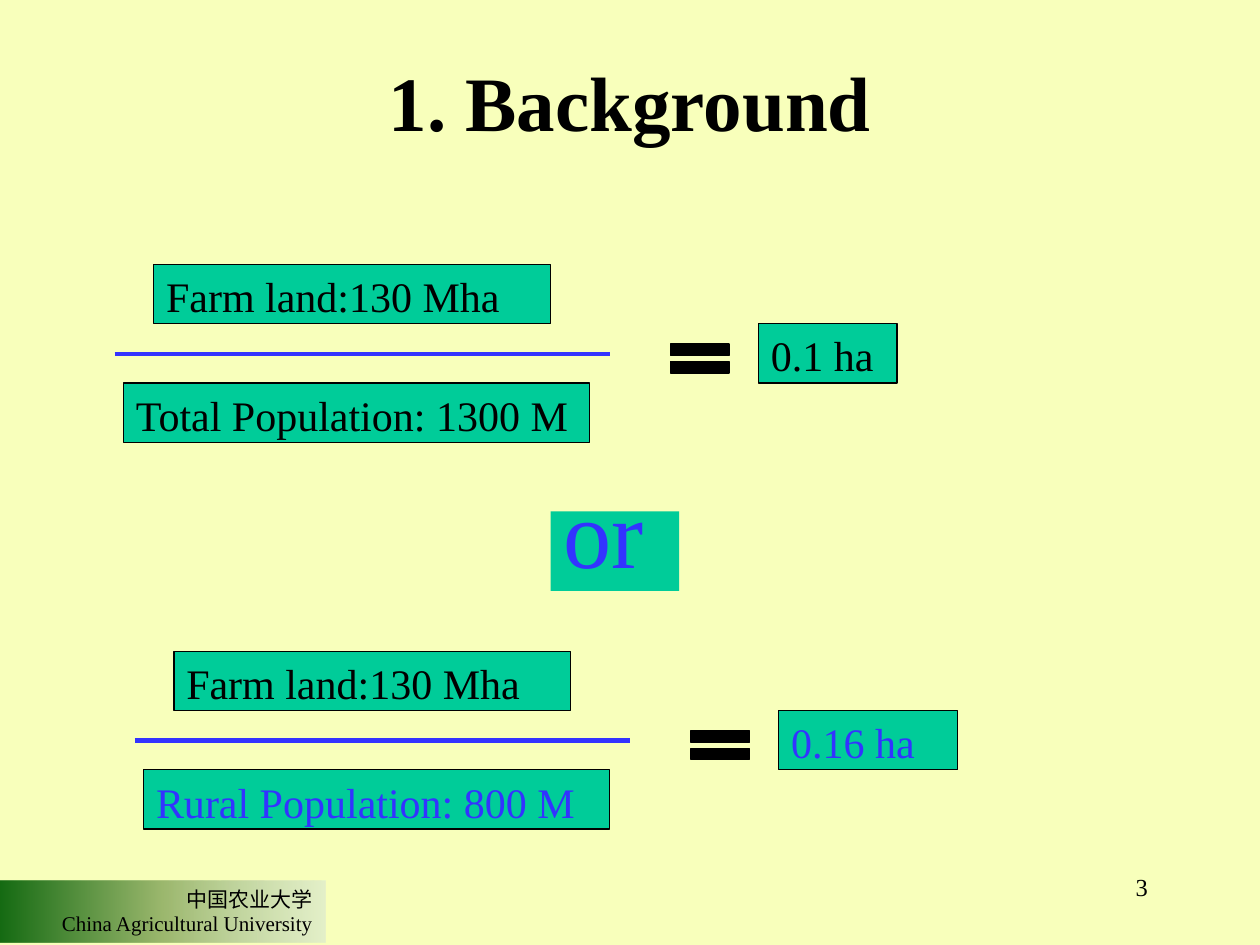
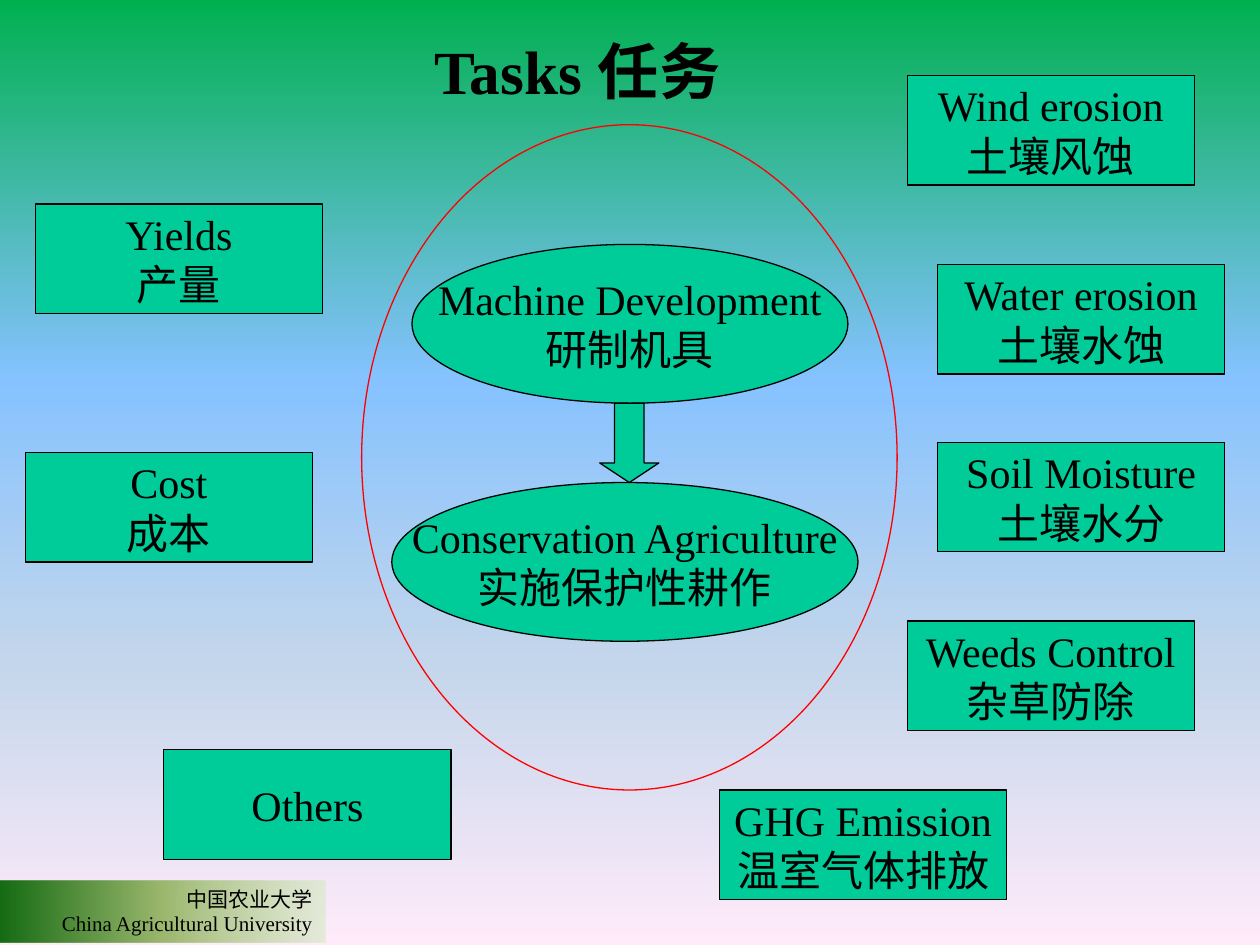
from dataclasses import dataclass

from pptx import Presentation
from pptx.dml.color import RGBColor
from pptx.enum.shapes import MSO_CONNECTOR, MSO_SHAPE as SHAPE
from pptx.enum.text import MSO_ANCHOR as ANCHOR, MSO_AUTO_SIZE, PP_ALIGN as ALIGN
from pptx.oxml.ns import qn
from pptx.util import Inches, Pt
from lxml.etree import SubElement


@dataclass(frozen=True)
class Theme:
    font: str = "Times New Roman"
    black: str = "000000"
    blue: str = "3333FF"
    red: str = "FF0000"
    green: str = "00CC99"
    page: str = "F8FFBB"
    # Gradient stops: position %, colour, opacity %
    sky: tuple = ((0, "00B050", 100), (40, "85C2FF", 100),
                  (70, "C4D6EB", 100), (100, "FFEBFA", 100))
    band: tuple = ((0, "DDEBCF", 72), (50, "9CB86E", 100), (100, "156B13", 100))
    title: int = 44
    subtitle: int = 35
    body: int = 24
    huge: int = 55
    number: int = 14
    footer: int = 12
    outline: float = 0.75
    bar: float = 2.75


T = Theme()


def rgb(color):
    return RGBColor.from_string(color)


def set_gradient(fill, element, stops, angle):
    """Fill with the given stops; the angle runs clockwise in degrees."""
    fill.gradient()
    fill.gradient_angle = (360 - angle) % 360
    gs_list = next(element.iter(qn("a:gsLst")))
    for gs in list(gs_list):
        gs_list.remove(gs)
    for pos, color, opacity in stops:
        gs = SubElement(gs_list, qn("a:gs"), pos=str(pos * 1000))
        clr = SubElement(gs, qn("a:srgbClr"), val=color)
        if opacity < 100:
            SubElement(clr, qn("a:alpha"), val=str(opacity * 1000))


def set_text(sp, text, size=T.body, color=T.black, bold=False, align=ALIGN.LEFT,
             anchor=ANCHOR.TOP, wrap=True, spacing=None):
    tf = sp.text_frame
    tf.text = text
    tf.auto_size = MSO_AUTO_SIZE.NONE
    tf.word_wrap = wrap
    tf.vertical_anchor = anchor
    for p in tf.paragraphs:
        p.alignment = align
        if spacing:
            p.line_spacing = Pt(spacing)
        p.font.name = T.font
        p.font.size = Pt(size)
        p.font.bold = bold
        p.font.color.rgb = rgb(color)


def add_shape(slide, kind, x, y, w, h, fill=T.green, line=T.black):
    sp = slide.shapes.add_shape(kind, Inches(x), Inches(y), Inches(w), Inches(h))
    sp.shadow.inherit = False
    if fill:
        sp.fill.solid()
        sp.fill.fore_color.rgb = rgb(fill)
    else:
        sp.fill.background()
    if line:
        sp.line.color.rgb = rgb(line)
        sp.line.width = Pt(T.outline)
    else:
        sp.line.fill.background()
    return sp


def add_title(slide, text, x, y, w, h, **style):
    sp = slide.shapes.title
    sp.left, sp.top, sp.width, sp.height = map(Inches, (x, y, w, h))
    set_text(sp, text, bold=True, **style)


def add_footer(slide):
    sp = add_shape(slide, SHAPE.RECTANGLE, 0, 6.99, 2.58, 0.49, line=None)
    set_gradient(sp.fill, sp.element, T.band, 180)
    set_text(sp, "中国农业大学\nChina Agricultural University", T.footer,
             align=ALIGN.RIGHT, spacing=14)


def add_number(slide, text):
    sp = slide.shapes.add_textbox(Inches(7.13), Inches(6.87), Inches(2.08), Inches(0.5))
    set_text(sp, text, T.number, align=ALIGN.RIGHT)


def add_label(slide, text, x, y, w, color=T.black):
    set_text(add_shape(slide, SHAPE.RECTANGLE, x, y, w, 0.47), text, color=color)


def add_bar(slide, x, y, w):
    line = slide.shapes.add_connector(MSO_CONNECTOR.STRAIGHT, Inches(x), Inches(y),
                                      Inches(x + w), Inches(y))
    line.line.color.rgb = rgb(T.blue)
    line.line.width = Pt(T.bar)
    SubElement(line.element.spPr, qn("a:effectLst"))


def add_fraction(slide, x, y, top, bottom, result, result_w, color=T.black):
    """Numerator over denominator, an equals sign and the result."""
    add_label(slide, top, x + 0.31, y, 3.15)
    add_bar(slide, x, y + 0.71, 3.93)
    add_label(slide, bottom, x + 0.07, y + 0.94, 3.7, color)
    add_shape(slide, SHAPE.MATH_EQUAL, x + 4.33, y + 0.55, 0.63, 0.39, fill=T.black)
    add_label(slide, result, x + 5.11, y + 0.47, result_w, color)


def add_node(slide, kind, text, x, y, w, h):
    set_text(add_shape(slide, kind, x, y, w, h), text, align=ALIGN.CENTER,
             anchor=ANCHOR.MIDDLE, wrap=False)


def new_slide(prs):
    slide = prs.slides.add_slide(prs.slide_layouts[5])
    add_footer(slide)
    return slide


def build_background(prs):
    slide = new_slide(prs)
    fill = slide.background.fill
    fill.solid()
    fill.fore_color.rgb = rgb(T.page)
    add_title(slide, "1. Background", 0.75, 0.29, 8.5, 1.02, size=T.title,
              align=ALIGN.CENTER, anchor=ANCHOR.MIDDLE)
    add_number(slide, "3")

    # Land per head, for everyone and for the rural population
    land = "Farm land:130 Mha"
    add_fraction(slide, 0.91, 2.1, land, "Total Population: 1300 M", "0.1 ha", 1.1)
    either = add_shape(slide, SHAPE.RECTANGLE, 4.37, 4.06, 1.02, 0.63, line=None)
    set_text(either, "or", T.huge, T.blue, spacing=40)
    add_fraction(slide, 1.07, 5.17, land, "Rural Population: 800 M", "0.16 ha", 1.42,
                 T.blue)


def build_tasks(prs):
    slide = new_slide(prs)
    set_gradient(slide.background.fill, slide.element, T.sky, 90)
    add_title(slide, "Tasks 任务", 3.35, 0.21, 2.91, 0.68, size=T.subtitle)

    # Core activities inside the ring
    add_node(slide, SHAPE.OVAL, "Machine Development\n研制机具", 3.27, 1.94, 3.46, 1.26)
    add_node(slide, SHAPE.OVAL, "Conservation Agriculture\n实施保护性耕作",
             3.11, 3.83, 3.7, 1.26)
    add_shape(slide, SHAPE.OVAL, 2.87, 0.99, 4.25, 5.28, fill=None, line=T.red)
    arrow = add_shape(slide, SHAPE.DOWN_ARROW, 4.76, 3.2, 0.47, 0.63)
    arrow.adjustments[0] = 0.5
    arrow.adjustments[1] = 0.33

    # Effects to study around the ring
    effects = (
        ("Yields\n产量", 0.28, 1.62),
        ("Cost\n成本", 0.2, 3.59),
        ("Wind erosion\n土壤风蚀", 7.2, 0.6),
        ("Water erosion\n土壤水蚀", 7.44, 2.1),
        ("Soil Moisture\n土壤水分", 7.44, 3.51),
        ("Weeds Control\n杂草防除", 7.2, 4.93),
        ("GHG Emission\n温室气体排放", 5.71, 6.27),
        ("Others", 1.3, 5.95),
    )
    for text, x, y in effects:
        add_node(slide, SHAPE.RECTANGLE, text, x, y, 2.28, 0.87)


def main():
    prs = Presentation()
    prs.slide_width, prs.slide_height = Inches(10), Inches(7.5)
    build_background(prs)
    build_tasks(prs)
    prs.save("out.pptx")


if __name__ == "__main__":
    main()
